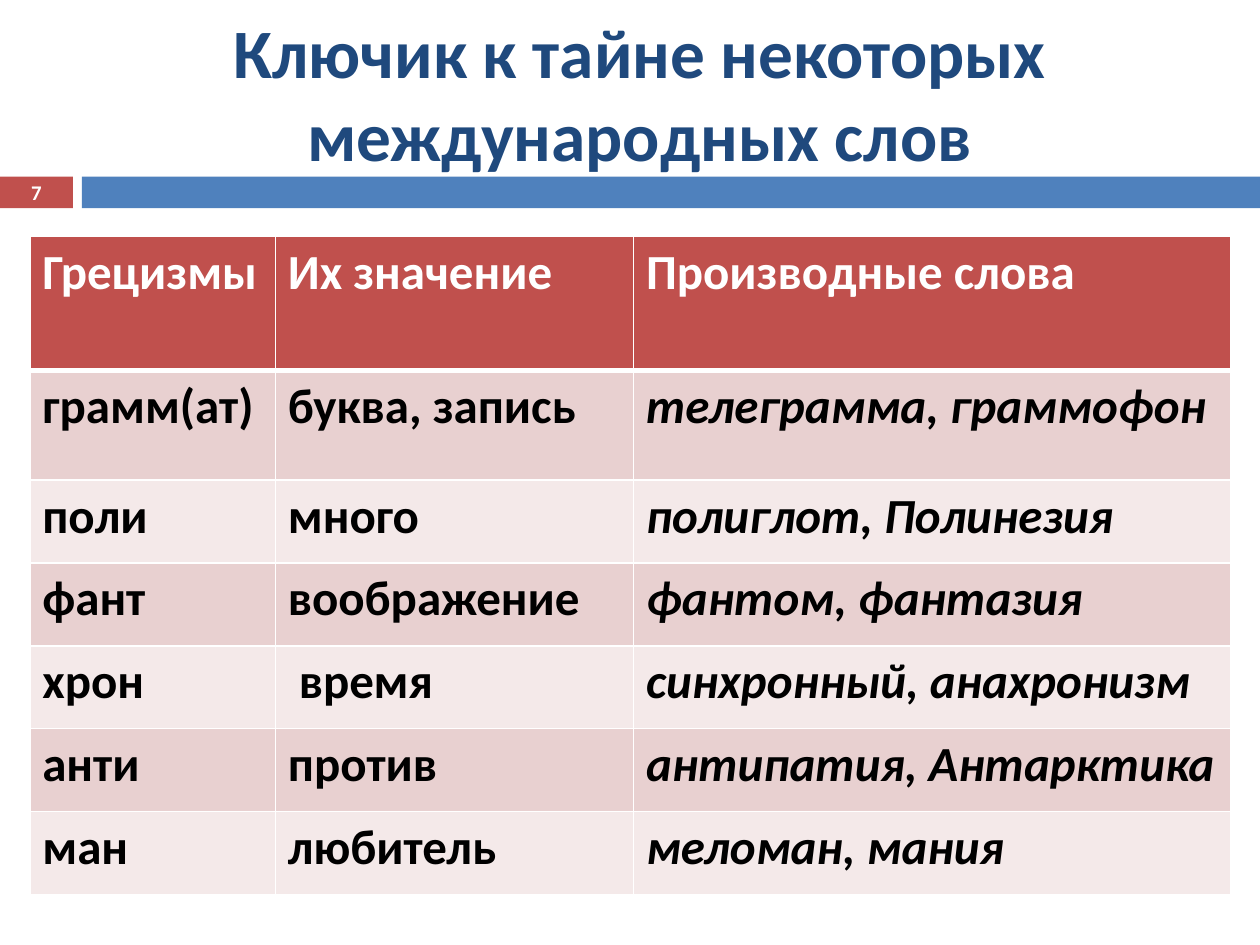
from lxml import etree
from pptx import Presentation, util as u
from pptx.dml.color import RGBColor
from pptx.enum import shapes, text
from pptx.oxml.ns import qn

FONT = "Calibri"
RED, BLUE, NAVY, WHITE, BLACK = "C0504D", "4F81BD", "1F497D", "FFFFFF", "000000"
BANDS = ("E8D0D0", "F4E9E9")
COLUMN_WIDTHS = (4.95, 7.22, 12.04)
ROW_HEIGHTS = (2.71, 2.21) + (1.67,) * 5
GLOSSARY = (
    ("Грецизмы", "Их значение", "Производные слова"),
    ("грамм(ат)", "буква, запись", "телеграмма, граммофон"),
    ("поли", "много", "полиглот, Полинезия"),
    ("фант", "воображение", "фантом, фантазия"),
    ("хрон", " время", "синхронный, анахронизм"),
    ("анти", "против", "антипатия, Антарктика"),
    ("ман", "любитель", "меломан, мания"),
)


def paint(fill, color):
    fill.solid()
    fill.fore_color.rgb = RGBColor.from_string(color)


def add_run(paragraph, words, size, color, italic=False):
    run = paragraph.add_run()
    run.text = words
    font = run.font
    font.name, font.size, font.bold, font.italic = FONT, u.Pt(size), True, italic
    font.color.rgb = RGBColor.from_string(color)


def add_bar(slide, left, width, color):
    bar = slide.shapes.add_shape(
        shapes.MSO_SHAPE.RECTANGLE, u.Cm(left), u.Cm(3.56), u.Cm(width), u.Cm(0.64))
    bar.shadow.inherit = False
    paint(bar.fill, color)
    bar.line.fill.background()


def add_label(slide, box, words, size, color):
    frame = slide.shapes.add_textbox(*map(u.Cm, box)).text_frame
    frame.word_wrap = True
    frame.vertical_anchor = text.MSO_ANCHOR.MIDDLE
    frame.margin_top = frame.margin_bottom = 0
    paragraph = frame.paragraphs[0]
    paragraph.alignment = text.PP_ALIGN.CENTER
    add_run(paragraph, words, size, color)


def add_borders(cell, top, bottom):
    properties = cell._tc.get_or_add_tcPr()
    for side, points in (("L", 1), ("R", 1), ("T", top), ("B", bottom)):
        border = etree.SubElement(properties, qn(f"a:ln{side}"), w=str(u.Pt(points)))
        fill = etree.SubElement(border, qn("a:solidFill"))
        etree.SubElement(fill, qn("a:srgbClr"), val=WHITE)


def add_glossary(slide):
    table = slide.shapes.add_table(
        len(GLOSSARY), len(COLUMN_WIDTHS), u.Cm(0.6), u.Cm(4.76),
        u.Cm(sum(COLUMN_WIDTHS)), u.Cm(sum(ROW_HEIGHTS))).table
    for column, width in zip(table.columns, COLUMN_WIDTHS):
        column.width = u.Cm(width)
    for r, (entry, height) in enumerate(zip(GLOSSARY, ROW_HEIGHTS)):
        table.rows[r].height = u.Cm(height)
        header = r == 0
        for c, words in enumerate(entry):
            cell = table.cell(r, c)
            add_borders(cell, top=3 if r == 1 else 1, bottom=3 if header else 1)
            paint(cell.fill, RED if header else BANDS[(r - 1) % 2])
            add_run(cell.text_frame.paragraphs[0], words, 28,
                    WHITE if header else BLACK, italic=not header and c == 2)


def main():
    deck = Presentation()
    deck.slide_width, deck.slide_height = u.Cm(25.4), u.Cm(19.05)
    slide = deck.slides.add_slide(deck.slide_layouts[6])
    add_bar(slide, 0, 1.47, RED)
    add_bar(slide, 1.65, 23.75, BLUE)
    add_label(slide, (1.57, 0.79, 22.66, 2.13),
              "Ключик к тайне некоторых международных слов", 39.6, NAVY)
    add_label(slide, (0, 3.53, 1.47, 0.69), "7", 11.9, WHITE)
    add_glossary(slide)
    deck.save("out.pptx")


if __name__ == "__main__":
    main()
